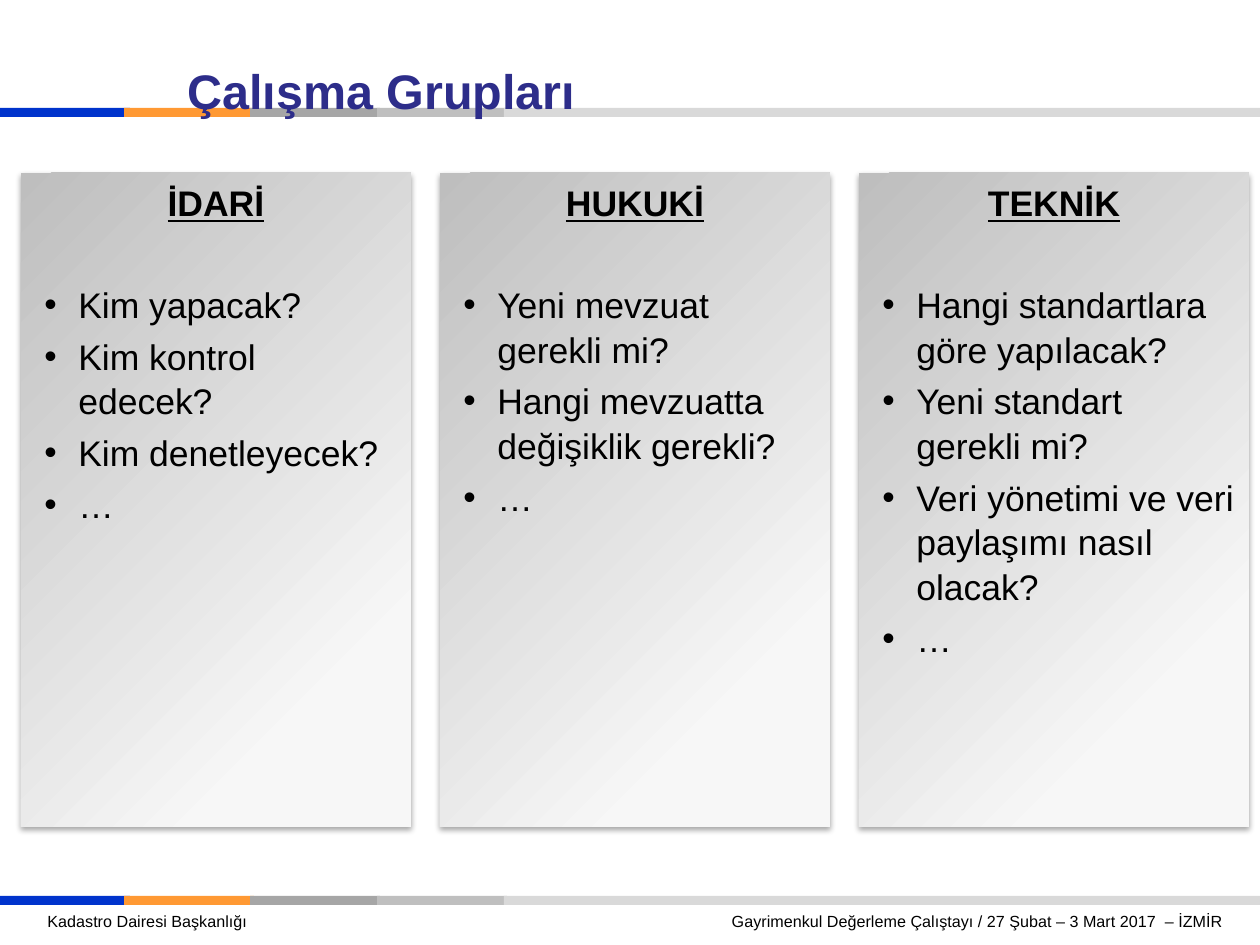
from lxml.etree import SubElement
from pptx import Presentation
from pptx.dml.color import RGBColor
from pptx.enum.shapes import MSO_SHAPE as Shape
from pptx.enum.text import MSO_ANCHOR as Anchor, PP_ALIGN as Align
from pptx.oxml.ns import qn
from pptx.util import Pt

PX = 914400 / 126
BLACK = RGBColor(0x00, 0x00, 0x00)
NAVY = RGBColor(0x2D, 0x2D, 0x8A)
BLUE = RGBColor(0x00, 0x33, 0xCC)
ORANGE = RGBColor(0xFF, 0x99, 0x33)
DARK_GREY = RGBColor(0xA6, 0xA6, 0xA6)
MID_GREY = RGBColor(0xBF, 0xBF, 0xBF)
LIGHT_GREY = RGBColor(0xD9, 0xD9, 0xD9)
PANEL_DARK = RGBColor(0xBE, 0xBE, 0xBE)
PANEL_LIGHT = RGBColor(0xF7, 0xF7, 0xF7)

STRIPE = [(0, 130, BLUE), (124, 130, ORANGE), (250, 130, DARK_GREY),
          (377, 130, MID_GREY), (504, 756, LIGHT_GREY)]
GROUPS = [
    ("İDARİ", ["Kim yapacak?", "Kim kontrol edecek?", "Kim denetleyecek?", "…"]),
    ("HUKUKİ", ["Yeni mevzuat gerekli mi?", "Hangi mevzuatta değişiklik gerekli?", "…"]),
    ("TEKNİK", ["Hangi standartlara göre yapılacak?", "Yeni standart gerekli mi?",
                "Veri yönetimi ve veri paylaşımı nasıl olacak?", "…"]),
]


def emu(px):
    return round(px * PX)


def write(paragraph, text, size, color=BLACK, bold=False, underline=False,
          align=Align.LEFT, before=0, spacing=None, bullet=False, right_tab=None):
    props = paragraph._p.get_or_add_pPr()
    if bullet:
        props.set("marL", str(emu(45)))
        props.set("indent", str(emu(-34)))
        SubElement(props, qn("a:buFont"), typeface="Arial")
        SubElement(props, qn("a:buChar"), char="•")
    if right_tab:
        tabs = SubElement(props, qn("a:tabLst"))
        SubElement(tabs, qn("a:tab"), pos=str(emu(right_tab)), algn="r")
    paragraph.alignment = align
    if before:
        paragraph.space_before = Pt(before)
    if spacing:
        paragraph.line_spacing = spacing
    run = paragraph.add_run()
    run.text = text
    font = run.font
    font.name, font.size, font.bold, font.underline = "Arial", Pt(size), bold, underline
    font.color.rgb = color


class SlideBuilder:
    body_size = 20.3
    body_spacing = 1.05

    def __init__(self, slide):
        self.slide = slide

    def rect(self, x, y, w, h):
        shape = self.slide.shapes.add_shape(Shape.RECTANGLE, emu(x), emu(y), emu(w), emu(h))
        shape.shadow.inherit = False
        shape.line.fill.background()
        return shape

    def stripe(self, y):
        for x, width, color in STRIPE:
            fill = self.rect(x, y, width, 9).fill
            fill.solid()
            fill.fore_color.rgb = color

    def text(self, x, y, w, h, text, anchor=Anchor.TOP, **style):
        frame = self.slide.shapes.add_textbox(emu(x), emu(y), emu(w), emu(h)).text_frame
        frame.word_wrap = True
        frame.vertical_anchor = anchor
        write(frame.paragraphs[0], text, **style)

    def panel(self, x, y, w, h, heading, questions):
        panel = self.rect(x, y, w, h)
        panel.fill.gradient()
        panel.fill.gradient_angle = 315
        for stop, position, color in zip(panel.fill.gradient_stops, (0, 0.8),
                                         (PANEL_DARK, PANEL_LIGHT)):
            stop.position = position
            stop.color.rgb = color
        self.soft_shadow(panel)

        frame = panel.text_frame
        frame.word_wrap = True
        frame.vertical_anchor = Anchor.TOP
        write(frame.paragraphs[0], heading, self.body_size, bold=True, underline=True,
              align=Align.CENTER, spacing=self.body_spacing)
        for index, question in enumerate(questions):
            write(frame.add_paragraph(), question, self.body_size, bullet=True,
                  before=4 if index else 32.5, spacing=self.body_spacing)

    def soft_shadow(self, shape):
        effects = shape._element.spPr.find(qn("a:effectLst"))
        shadow = SubElement(effects, qn("a:outerShdw"), blurRad=str(Pt(3.1)),
                            dist=str(Pt(1.8)), dir="5400000", rotWithShape="0")
        color = SubElement(shadow, qn("a:srgbClr"), val=str(BLACK))
        SubElement(color, qn("a:alpha"), val="35000")


def main():
    deck = Presentation()
    deck.slide_width, deck.slide_height = emu(1260), emu(945)
    builder = SlideBuilder(deck.slides.add_slide(deck.slide_layouts[6]))

    # Footer and the stripes above and below the content
    builder.text(35, 905, 1201, 52,
                 "Kadastro Dairesi Başkanlığı\t"
                 "Gayrimenkul Değerleme Çalıştayı / 27 Şubat – 3 Mart 2017  – İZMİR",
                 size=9.2, right_tab=1175)
    for y in (108, 896):
        builder.stripe(y)

    # Working groups
    for column, (heading, questions) in enumerate(GROUPS):
        builder.panel(21 + 419 * column, 173, 390, 654, heading, questions)

    # Title
    builder.text(175, 53, 1063, 72, "Çalışma Grupları", anchor=Anchor.BOTTOM,
                 size=27.7, color=NAVY, bold=True)

    deck.save("out.pptx")


if __name__ == "__main__":
    main()
